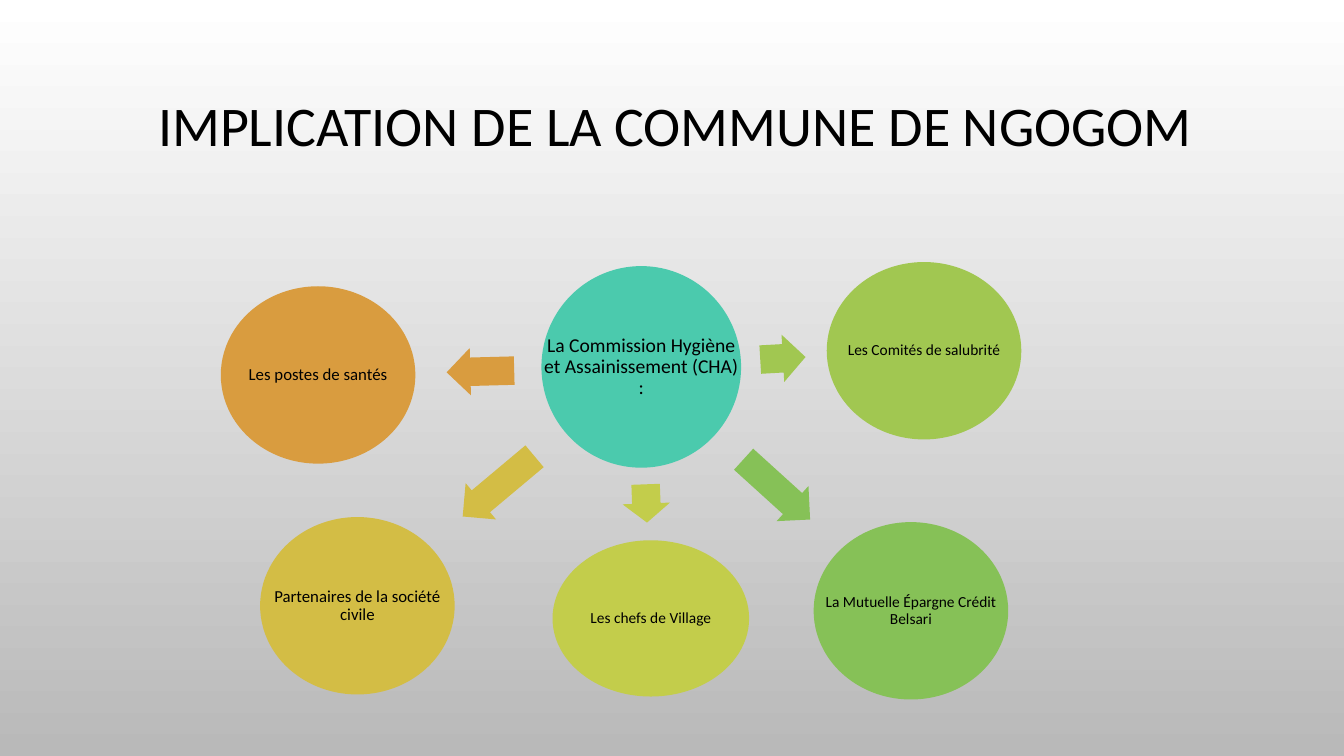
"""Build the slide on the involvement of the commune of Ngogom."""
from dataclasses import dataclass

from pptx import Presentation
from pptx.dml.color import RGBColor
from pptx.enum.shapes import MSO_SHAPE
from pptx.enum.text import MSO_ANCHOR, PP_ALIGN
from pptx.shapes.autoshape import Shape
from pptx.slide import Slide
from pptx.text.text import TextFrame
from pptx.util import Inches, Pt

OVAL = MSO_SHAPE.OVAL
RIGHT_ARROW = MSO_SHAPE.RIGHT_ARROW
MIDDLE = MSO_ANCHOR.MIDDLE
CENTER = PP_ALIGN.CENTER


@dataclass(frozen=True)
class Theme:
    font: str = "Calibri"
    ink: str = "000000"
    sky: str = "FFFFFF"
    ground: str = "B9B9B9"
    teal: str = "4BCAAD"
    green: str = "86C157"
    light_green: str = "A1C751"
    lime: str = "C3CD4B"
    yellow: str = "D3BD45"
    orange: str = "D99C3F"
    title_size: int = 40
    hub_size: int = 14
    large_size: int = 12
    small_size: int = 11
    line_spacing: float = 0.9
    inset: float = 0.02


@dataclass(frozen=True)
class Frame:
    left: float
    top: float
    width: float
    height: float


@dataclass(frozen=True)
class Circle:
    label: str
    frame: Frame
    color: str
    size: int


@dataclass(frozen=True)
class Arrow:
    frame: Frame
    angle: float


@dataclass(frozen=True)
class Partner:
    circle: Circle
    arrow: Arrow


THEME = Theme()
SPOKE_WIDTH, SPOKE_HEIGHT = 1.93, 1.76
ARROW_HEIGHT = 0.47


def partner(label: str, color: str, size: int, left: float, top: float, arrow: Arrow,
            width: float = SPOKE_WIDTH, height: float = SPOKE_HEIGHT) -> Partner:
    """Describe an outer circle and the arrow that leads to it."""
    return Partner(Circle(label, Frame(left, top, width, height), color, size), arrow)


def arrow(left: float, top: float, length: float, angle: float) -> Arrow:
    """Describe an arrow of the common height."""
    return Arrow(Frame(left, top, length, ARROW_HEIGHT), angle)


HUB = Circle("La Commission Hygiène et Assainissement (CHA) :",
             Frame(5.37, 2.64, 1.98, 2), THEME.teal, THEME.hub_size)
PARTNERS = (
    partner("La Mutuelle Épargne Crédit Belsari", THEME.green, THEME.small_size,
            8.07, 5.18, arrow(7.26, 4.62, 0.89, 42.2)),
    partner("Les Comités de salubrité", THEME.light_green, THEME.small_size,
            8.2, 2.6, arrow(7.54, 3.32, 0.45, 356.7)),
    partner("Les chefs de Village", THEME.lime, THEME.small_size,
            5.48, 5.36, arrow(6.22, 4.76, 0.38, 87.9), 1.95, 1.55),
    partner("Partenaires de la société civile", THEME.yellow, THEME.large_size,
            2.58, 5.13, arrow(4.48, 4.59, 0.93, 140)),
    partner("Les postes de santés", THEME.orange, THEME.large_size,
            2.19, 2.84, arrow(4.43, 3.45, 0.67, 178.5)),
)


def bounds(frame: Frame) -> tuple[int, int, int, int]:
    """Return the frame as lengths."""
    return (Inches(frame.left), Inches(frame.top),
            Inches(frame.width), Inches(frame.height))


def write(text_frame: TextFrame, text: str, size: int) -> None:
    """Write one centred paragraph."""
    text_frame.word_wrap = True
    text_frame.vertical_anchor = MIDDLE
    para = text_frame.paragraphs[0]
    para.text = text
    para.alignment = CENTER
    para.line_spacing = THEME.line_spacing
    para.font.name = THEME.font
    para.font.size = Pt(size)
    para.font.color.rgb = RGBColor.from_string(THEME.ink)


def add_filled(page: Slide, kind: MSO_SHAPE, frame: Frame, color: str) -> Shape:
    """Add a flat shape without an outline."""
    shape = page.shapes.add_shape(kind, *bounds(frame))
    shape.shadow.inherit = False
    shape.fill.solid()
    shape.fill.fore_color.rgb = RGBColor.from_string(color)
    shape.line.fill.background()
    return shape


def add_circle(page: Slide, circle: Circle) -> None:
    """Add a circle with a label as wide as the circle."""
    add_filled(page, OVAL, circle.frame, circle.color)
    box = page.shapes.add_textbox(*bounds(circle.frame))
    text_frame = box.text_frame
    text_frame.margin_left = text_frame.margin_right = Inches(THEME.inset)
    text_frame.margin_top = text_frame.margin_bottom = Inches(THEME.inset)
    write(text_frame, circle.label, circle.size)


def add_arrow(page: Slide, item: Arrow, color: str) -> None:
    """Add a rotated block arrow."""
    shape = add_filled(page, RIGHT_ARROW, item.frame, color)
    shape.adjustments[0] = 0.6
    shape.adjustments[1] = 0.5
    shape.rotation = item.angle


def paint_background(page: Slide) -> None:
    """Fill the background from top to bottom."""
    fill = page.background.fill
    fill.gradient()
    fill.gradient_angle = 270
    for stop, color, position in zip(fill.gradient_stops, (THEME.sky, THEME.ground), (0, 1)):
        stop.color.rgb = RGBColor.from_string(color)
        stop.position = position


def add_title(page: Slide) -> None:
    """Place and format the title."""
    title = page.shapes.title
    title.left, title.top, title.width, title.height = bounds(Frame(1.03, 0.45, 11.33, 1.64))
    write(title.text_frame, "IMPLICATION DE LA COMMUNE DE NGOGOM", THEME.title_size)


def main() -> None:
    """Build and save the deck."""
    deck = Presentation()
    deck.slide_width, deck.slide_height = Inches(13.33), Inches(7.5)
    page = deck.slides.add_slide(deck.slide_layouts.get_by_name("Title Only"))
    paint_background(page)
    add_title(page)
    add_circle(page, HUB)
    for item in PARTNERS:
        add_arrow(page, item.arrow, item.circle.color)
        add_circle(page, item.circle)
    deck.save("out.pptx")


if __name__ == "__main__":
    main()
